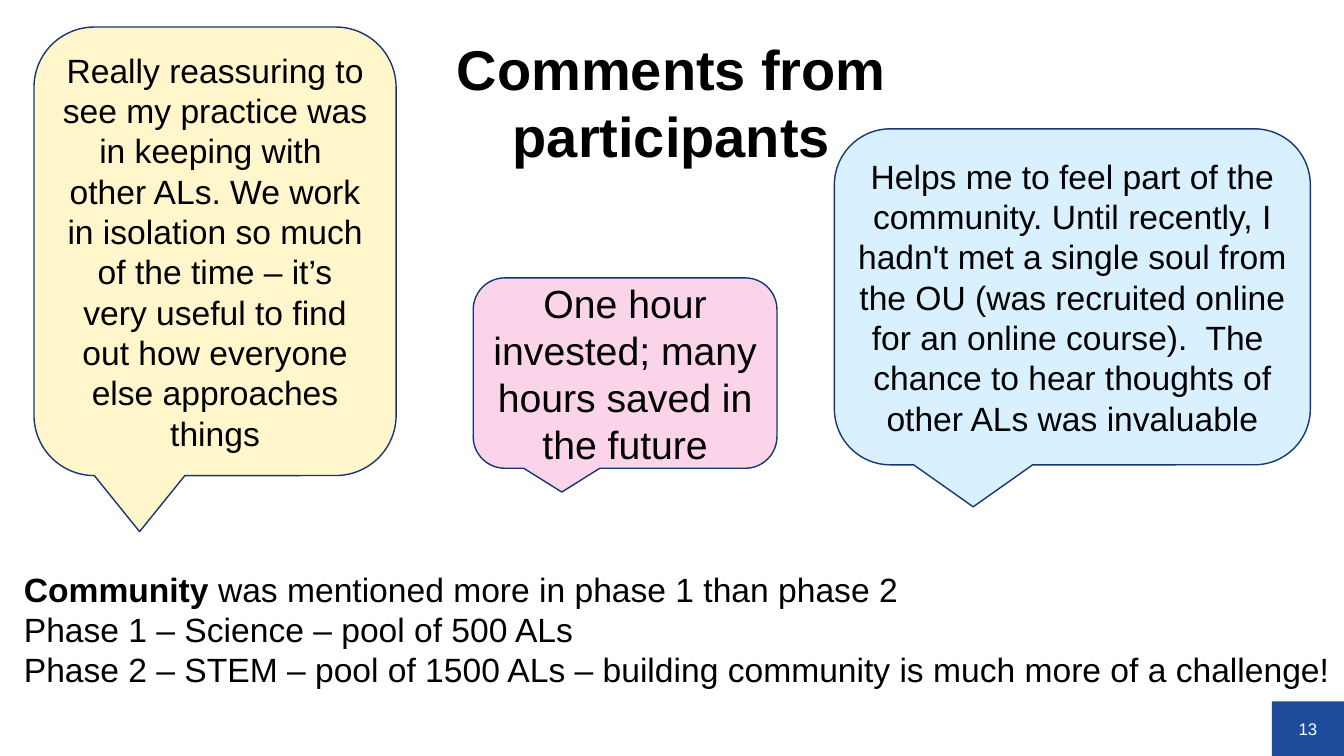
import pptx
import pptx.util
import pptx.dml.color
import pptx.enum.shapes
import pptx.enum.text

Pt = pptx.util.Pt
RGB = pptx.dml.color.RGBColor.from_string
SHAPES = pptx.enum.shapes.MSO_SHAPE
ALIGN = pptx.enum.text.PP_ALIGN
ANCHOR = pptx.enum.text.MSO_ANCHOR

THEME = {
    "font": "Arial",
    "text": "000000",
    "white": "FFFFFF",
    "outline": "163773",
    "badge": "1E4B9B",
    "blue": "D9F1FF",
    "pink": "FBD4E9",
    "yellow": "FFF6CC",
    "title_size": 40,
    "large_size": 28,
    "body_size": 24,
    "number_size": 12,
}


def write_text(shape, paragraphs, size, color="text", align=ALIGN.CENTER,
               anchor=ANCHOR.MIDDLE, inset=None):
    """Fill a shape with paragraphs, each a list of (text, bold) runs."""
    frame = shape.text_frame
    settings = {"word_wrap": True, "vertical_anchor": anchor}
    if inset is not None:
        for side in ("left", "right", "top", "bottom"):
            settings[f"margin_{side}"] = Pt(inset)
    for name, value in settings.items():
        setattr(frame, name, value)
    for index, runs in enumerate(paragraphs):
        paragraph = frame.add_paragraph() if index else frame.paragraphs[0]
        paragraph.alignment = align
        for text, bold in runs:
            run = paragraph.add_run()
            run.text = text
            font_values = {"name": THEME["font"], "size": Pt(THEME[size]), "bold": bold}
            for name, value in font_values.items():
                setattr(run.font, name, value)
            run.font.color.rgb = RGB(THEME[color])


def add_filled(slide, kind, box, fill):
    """Add a preset shape with a solid theme fill and no shadow."""
    shape = slide.shapes.add_shape(kind, *map(Pt, box))
    shape.shadow.inherit = False
    shape.fill.solid()
    shape.fill.fore_color.rgb = RGB(THEME[fill])
    return shape


presentation = pptx.Presentation()
presentation.slide_width, presentation.slide_height = Pt(960), Pt(540)
slide = presentation.slides.add_slide(presentation.slide_layouts[6])

# Page number badge
badge = add_filled(slide, SHAPES.RECTANGLE, (908.5, 501, 51.5, 39), "badge")
badge.line.fill.background()
write_text(badge, [[("13", False)]], "number_size", color="white", inset=0)

# Speech bubbles: box, fill, type size, inset, paragraphs
bubbles = [
    ((596, 92, 340, 240), "blue", "body_size", 0, [
        "Helps me to feel part of the community. Until recently, I hadn't met "
        "a single soul from the OU (was recruited online for an online "
        "course).  The  chance to hear thoughts of other ALs was invaluable",
    ]),
    ((338, 198.5, 217, 136), "pink", "large_size", None, [
        "One hour invested; many hours saved in the future",
    ]),
    ((24.3, 19.3, 258.7, 320.4), "yellow", "body_size", None, [
        "Really reassuring to see my practice was in keeping with ",
        "other ALs. We work in isolation so much of the time – it’s very "
        "useful to find out how everyone else approaches things",
    ]),
]
for box, fill, size, inset, comments in bubbles:
    bubble = add_filled(slide, SHAPES.ROUNDED_RECTANGULAR_CALLOUT, box, fill)
    bubble.line.color.rgb = RGB(THEME["outline"])
    bubble.line.width = Pt(1)
    write_text(bubble, [[(comment, False)] for comment in comments], size, inset=inset)

# Title
title = slide.shapes.add_textbox(Pt(202), Pt(21), Pt(555), Pt(104))
write_text(title, [[("Comments from participants", True)]], "title_size",
           anchor=ANCHOR.TOP)

# Closing remarks
remarks = slide.shapes.add_textbox(Pt(10), Pt(402.5), Pt(950), Pt(117))
write_text(remarks, [
    [("Community ", True), ("was mentioned more in phase 1 than phase 2", False)],
    [("Phase 1 – Science – pool of 500 ALs", False)],
    [("Phase 2 – STEM – pool of 1500 ALs – building community is much more "
      "of a challenge!", False)],
], "body_size", align=ALIGN.LEFT, anchor=ANCHOR.TOP)

presentation.save("out.pptx")
